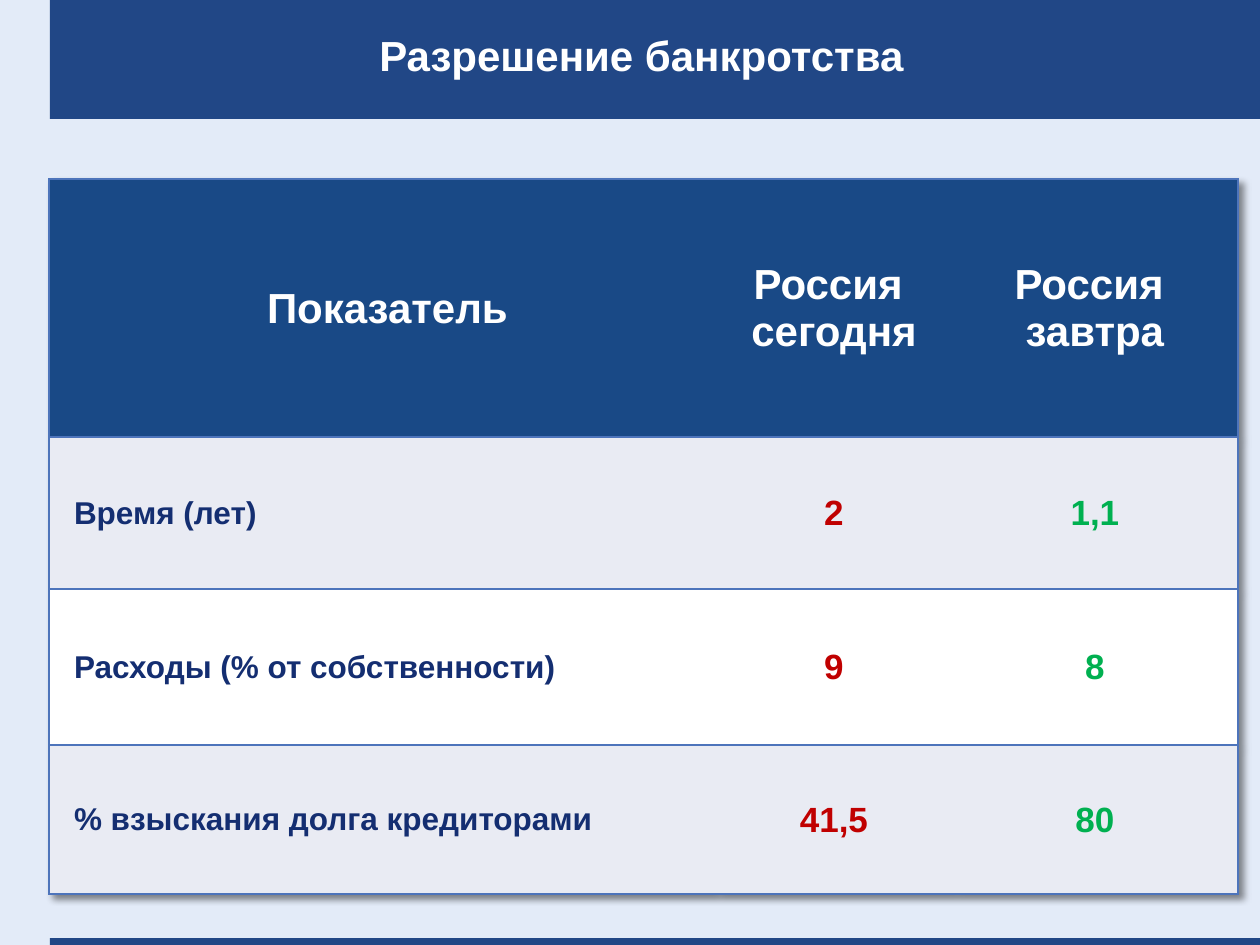
"""Build a one-slide deck with a table on resolving bankruptcy."""
from lxml.etree import SubElement
from pptx import Presentation
from pptx.dml.color import RGBColor
from pptx.enum.shapes import MSO_SHAPE as SHAPE
from pptx.enum.text import MSO_ANCHOR as ANCHOR, PP_ALIGN as ALIGN
from pptx.oxml import parse_xml
from pptx.oxml.ns import nsdecls, qn
from pptx.util import Pt

PX = 914400 // 126
NAVY, HEADER, BORDER, LABEL = "214786", "194986", "4D74BB", "142E71"
WHITE, GREY, RED, GREEN = "FFFFFF", "E9EBF3", "C00000", "00B050"
SHADOW = (
    f'<a:effectLst {nsdecls("a")}><a:outerShdw blurRad="%d" dist="%d" dir="2700000" algn="tl" '
    'rotWithShape="0"><a:srgbClr val="000000"><a:alpha val="%d"/></a:srgbClr>'
    "</a:outerShdw></a:effectLst>"
)


def paint(color_format, value):
    color_format.rgb = RGBColor.from_string(value)


def write(frame, text, size=20, color=WHITE, align=ALIGN.CENTER, indent=0, spacing=None):
    for index, line in enumerate(text.split("\n")):
        para = frame.add_paragraph() if index else frame.paragraphs[0]
        para.alignment = align
        para.line_spacing = spacing
        if indent:
            para._p.get_or_add_pPr().set("marL", str(indent * PX))
        span = para.add_run()
        span.text = line
        span.font.name, span.font.size, span.font.bold = "Arial", Pt(size), True
        paint(span.font.color, color)


deck = Presentation()
deck.slide_width, deck.slide_height = 1260 * PX, 945 * PX
page = deck.slides.add_slide(deck.slide_layouts[6])
page.background.fill.solid()
paint(page.background.fill.fore_color, "E3EBF8")

for top, height in [(0, 119), (938, 7)]:
    bar = page.shapes.add_shape(SHAPE.RECTANGLE, 50 * PX, top * PX, 1210 * PX, height * PX)
    bar.shadow.inherit = False
    bar.fill.solid()
    paint(bar.fill.fore_color, NAVY)
    bar.line.fill.background()

columns = [667, 236, 286]
heights = [258, 152, 156, 149]
rows = [
    ("Показатель", "Россия \nсегодня", "Россия \nзавтра"),
    ("Время (лет)", "2", "1,1"),
    ("Расходы (% от собственности)", "9", "8"),
    ("% взыскания долга кредиторами", "41,5", "80"),
]
body_formats = [
    dict(size=18, color=LABEL, align=ALIGN.LEFT, indent=24),
    dict(color=RED),
    dict(color=GREEN),
]
header_formats = [dict(size=24, indent=10), dict(size=24), dict(size=24)]
fills = [HEADER, GREY, WHITE, GREY]

frame = page.shapes.add_table(
    len(rows), len(columns), 49 * PX, 179 * PX, sum(columns) * PX, sum(heights) * PX
)
table = frame.table
table.horz_banding = False
properties = table._tbl.tblPr
properties.find(qn("a:tableStyleId")).text = "{2D5ABB26-0587-4C30-8999-92F81FD0307C}"
properties.insert(0, parse_xml(SHADOW % (50800, 50800, 45000)))
for column, width in zip(table.columns, columns):
    column.width = width * PX

for row, (height, texts, fill) in enumerate(zip(heights, rows, fills)):
    table.rows[row].height = height * PX
    formats = body_formats if row else header_formats
    for col, (text, style) in enumerate(zip(texts, formats)):
        cell = table.cell(row, col)
        cell.margin_left = cell.margin_right = cell.margin_top = PX
        cell.margin_bottom = 0
        cell.vertical_anchor = ANCHOR.MIDDLE
        sides = ["lnL"] * (col == 0) + ["lnR"] * (col == 2) + ["lnT", "lnB"]
        for side in sides:
            edge = SubElement(cell._tc.get_or_add_tcPr(), qn(f"a:{side}"), w=str(Pt(1)))
            SubElement(SubElement(edge, qn("a:solidFill")), qn("a:srgbClr"), val=BORDER)
        cell.fill.solid()
        paint(cell.fill.fore_color, fill)
        write(cell.text_frame, text, **style)

title = page.shapes.add_textbox(49 * PX, 0, 1160 * PX, 119 * PX).text_frame
title.word_wrap = True
title.vertical_anchor = ANCHOR.MIDDLE
title.margin_left = 25 * PX
title.margin_right = title.margin_top = title.margin_bottom = 0
write(title, "Разрешение банкротства", size=24, spacing=0.8)
run_properties = title.paragraphs[0].runs[0]._r.get_or_add_rPr()
run_properties.find(qn("a:solidFill")).addnext(parse_xml(SHADOW % (0, 38100, 100000)))

deck.save("out.pptx")
